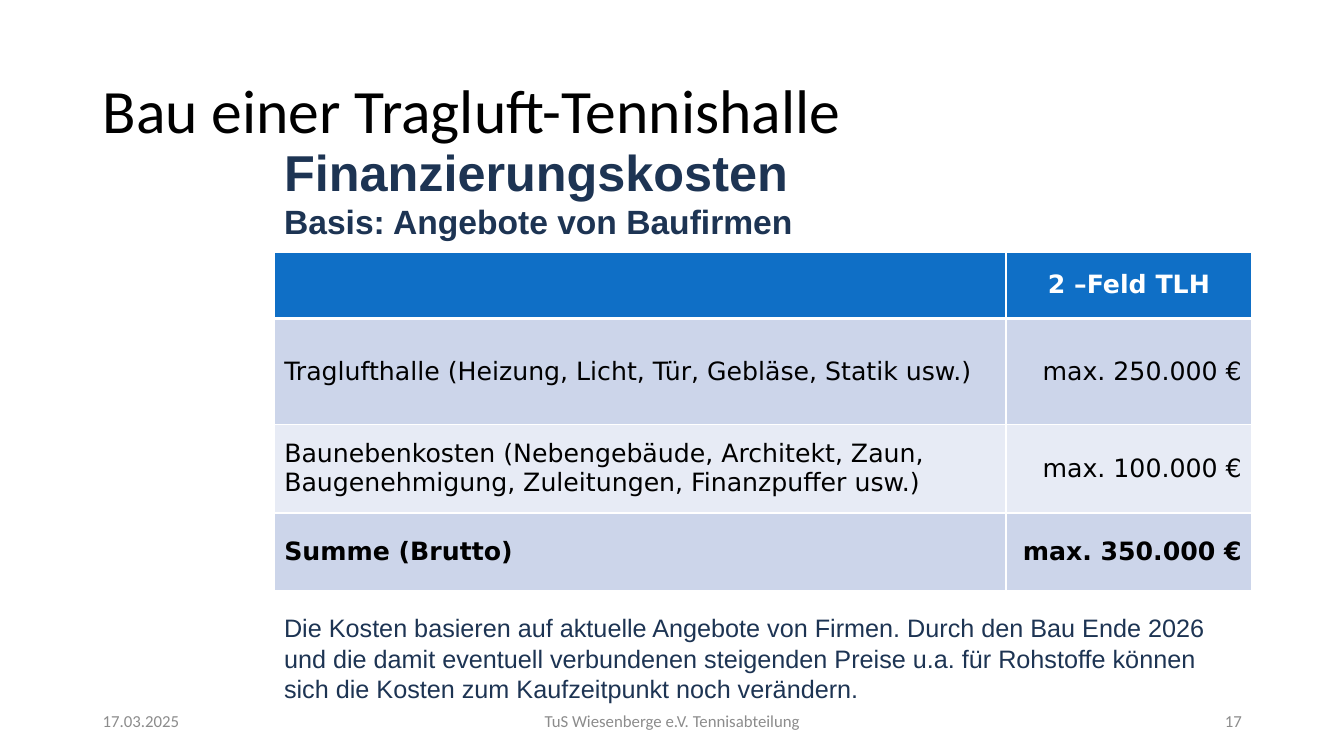
"""Build the slide on the financing costs of an air-supported tennis hall."""
from dataclasses import dataclass

from lxml import etree
from pptx import Presentation
from pptx.dml.color import RGBColor
from pptx.enum.text import MSO_ANCHOR, PP_ALIGN
from pptx.oxml.ns import qn
from pptx.util import Emu, Inches, Pt

LEFT, CENTER, RIGHT = PP_ALIGN.LEFT, PP_ALIGN.CENTER, PP_ALIGN.RIGHT
TOP, MIDDLE = MSO_ANCHOR.TOP, MSO_ANCHOR.MIDDLE
SLIDE_W, SLIDE_H = Inches(13.33), Inches(7.5)


@dataclass(frozen=True)
class Style:
    font: str
    size: int
    color: str
    bold: bool = False


@dataclass(frozen=True)
class Theme:
    title: Style = Style("Calibri", 44, "000000")
    footer: Style = Style("Calibri", 12, "8C8C8C")
    heading: Style = Style("Arial", 36, "1D3453", True)
    subheading: Style = Style("Arial", 24, "1D3453", True)
    note: Style = Style("Arial", 18, "1D3453")
    head: Style = Style("DejaVu Sans", 18, "FFFFFF", True)
    body: Style = Style("DejaVu Sans", 18, "000000")
    total: Style = Style("DejaVu Sans", 18, "000000", True)
    head_fill: str = "0F6FC6"
    band_dark: str = "CCD5EA"
    band_light: str = "E7EBF5"
    border: str = "FFFFFF"
    border_thin: int = 1
    border_thick: int = 3


@dataclass(frozen=True)
class Label:
    """A text box placed in percent of the slide's size."""
    text: str
    x: float
    y: float
    w: float
    h: float
    style: Style
    align: PP_ALIGN = LEFT
    anchor: MSO_ANCHOR = TOP
    spacing: float = 1.0


@dataclass(frozen=True)
class CostRow:
    """A table row with its height in percent of the slide's height."""
    item: str
    cost: str
    height: float
    style: Style
    fill: str
    align: PP_ALIGN = RIGHT


THEME = Theme()
MARGIN, INDENT = 6.9, 20.4
FOOTER_Y, FOOTER_H = 92.67, 5.33
TABLE_Y = 33.33
COLUMNS = (54.45, 18.3)

LABELS = (
    Label("Bau einer Tragluft-Tennishalle", MARGIN, 5.33, 86.25, 19.33,
          THEME.title, anchor=MIDDLE, spacing=0.9),
    Label("17.03.2025", MARGIN, FOOTER_Y, 22.5, FOOTER_H, THEME.footer, LEFT, MIDDLE),
    Label("TuS Wiesenberge e.V. Tennisabteilung", 33.15, FOOTER_Y, 33.75, FOOTER_H,
          THEME.footer, CENTER, MIDDLE),
    Label("17", 70.65, FOOTER_Y, 22.5, FOOTER_H, THEME.footer, RIGHT, MIDDLE),
    Label("Finanzierungskosten", INDENT, 18, 64.65, 9.47, THEME.heading),
    Label("Basis: Angebote von Baufirmen", INDENT, 25.87, 60.25, 6.67, THEME.subheading),
    Label("Die Kosten basieren auf aktuelle Angebote von Firmen. Durch den Bau Ende 2026 "
          "und die damit eventuell verbundenen steigenden Preise u.a. für Rohstoffe können "
          "sich die Kosten zum Kaufzeitpunkt noch verändern.",
          INDENT, 80.4, 70.8, 13.47, THEME.note),
)

ROWS = (
    CostRow("", "2 –Feld TLH", 8.8, THEME.head, THEME.head_fill, CENTER),
    CostRow("Traglufthalle (Heizung, Licht, Tür, Gebläse, Statik usw.)",
            "max. 250.000 €", 14, THEME.body, THEME.band_dark),
    CostRow("Baunebenkosten (Nebengebäude, Architekt, Zaun, "
            "Baugenehmigung, Zuleitungen, Finanzpuffer usw.)",
            "max. 100.000 €", 11.73, THEME.body, THEME.band_light),
    CostRow("Summe (Brutto)", "max. 350.000 €", 10.27, THEME.total, THEME.band_dark),
)


def across(percent: float) -> Emu:
    return Emu(round(SLIDE_W * percent / 100))


def down(percent: float) -> Emu:
    return Emu(round(SLIDE_H * percent / 100))


def write(tf, text: str, style: Style, align: PP_ALIGN, spacing: float = 1.0) -> None:
    tf.text = text
    p = tf.paragraphs[0]
    p.alignment, p.line_spacing = align, spacing
    for r in p.runs:
        r.font.name, r.font.size, r.font.bold = style.font, Pt(style.size), style.bold
        r.font.color.rgb = RGBColor.from_string(style.color)


def add_label(slide, label: Label) -> None:
    sp = slide.shapes.add_textbox(across(label.x), down(label.y),
                                  across(label.w), down(label.h))
    tf = sp.text_frame
    tf.word_wrap, tf.vertical_anchor = True, label.anchor
    write(tf, label.text, label.style, label.align, label.spacing)


def add_borders(cell, top: int, bottom: int) -> None:
    tc_pr = cell._tc.get_or_add_tcPr()
    thin = THEME.border_thin
    for side, width in (("L", thin), ("R", thin), ("T", top), ("B", bottom)):
        ln = etree.SubElement(tc_pr, qn(f"a:ln{side}"), w=str(Pt(width)))
        fill = etree.SubElement(ln, qn("a:solidFill"))
        etree.SubElement(fill, qn("a:srgbClr"), val=THEME.border)


def add_cost_table(slide, rows: tuple[CostRow, ...]) -> None:
    table = slide.shapes.add_table(
        len(rows), len(COLUMNS), across(INDENT), down(TABLE_Y),
        across(sum(COLUMNS)), down(sum(row.height for row in rows))).table
    for column, width in zip(table.columns, COLUMNS):
        column.width = across(width)
    for i, row in enumerate(rows):
        table.rows[i].height = down(row.height)
        top = THEME.border_thick if i == 1 else THEME.border_thin
        bottom = THEME.border_thick if i == 0 else THEME.border_thin
        for j, (text, align) in enumerate(((row.item, LEFT), (row.cost, row.align))):
            cell = table.cell(i, j)
            add_borders(cell, top, bottom)
            cell.fill.solid()
            cell.fill.fore_color.rgb = RGBColor.from_string(row.fill)
            cell.vertical_anchor = MIDDLE
            write(cell.text_frame, text, row.style, align)


def main() -> None:
    prs = Presentation()
    prs.slide_width, prs.slide_height = SLIDE_W, SLIDE_H
    slide = prs.slides.add_slide(prs.slide_layouts[6])
    add_cost_table(slide, ROWS)
    for label in LABELS:
        add_label(slide, label)
    prs.save("out.pptx")


if __name__ == "__main__":
    main()
